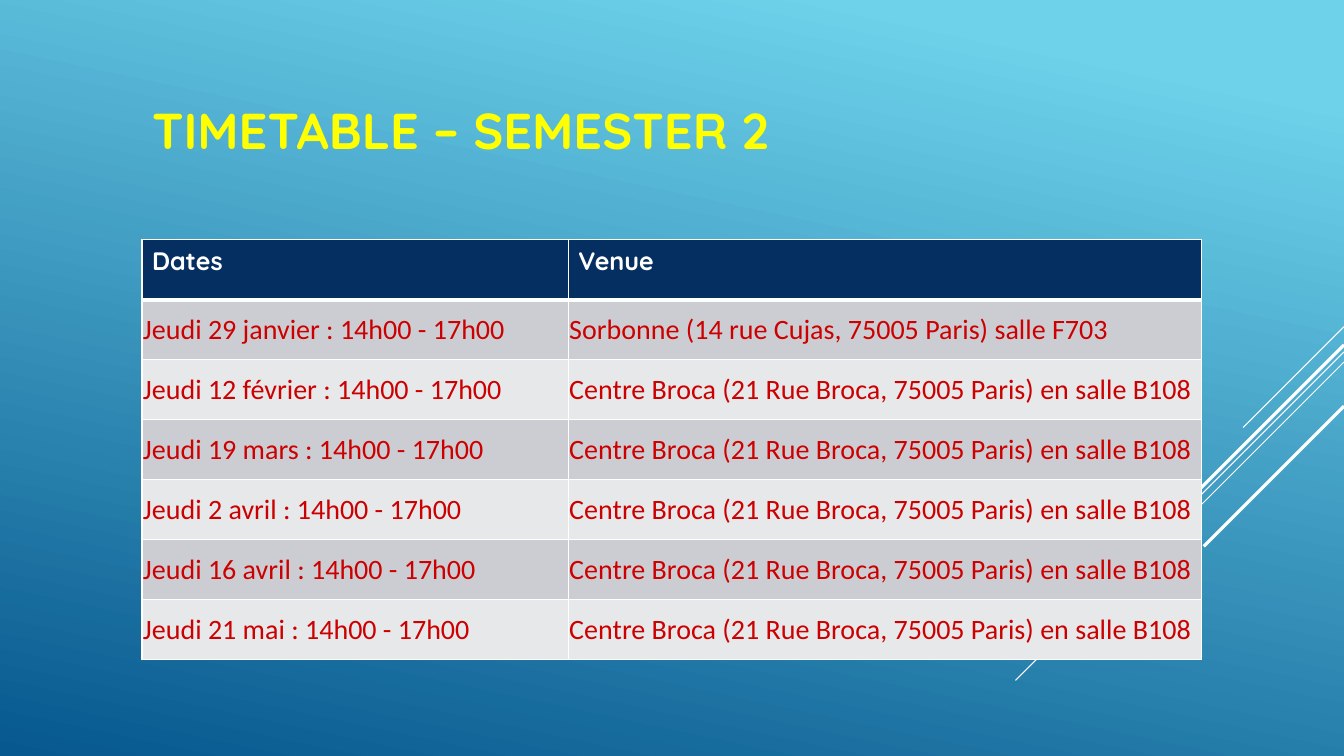
import pptx
import pptx.dml.color
import pptx.enum.shapes
import pptx.enum.text
import pptx.oxml
import pptx.oxml.ns
import pptx.util
from lxml import etree

RGBColor = pptx.dml.color.RGBColor
SKY = RGBColor(0x6E, 0xD2, 0xEB)
OCEAN = RGBColor(0x06, 0x58, 0x8E)
NAVY = RGBColor(0x05, 0x2F, 0x61)
YELLOW = RGBColor(0xFF, 0xFF, 0x00)
WHITE = RGBColor(0xFF, 0xFF, 0xFF)
RED = RGBColor(0xCC, 0x00, 0x00)
BANDS = (RGBColor(0xCC, 0xCD, 0xD2), RGBColor(0xE7, 0xE8, 0xEA))

COLUMNS, ROWS = 32, 18
LEFT = 3.38
BROCA = "Centre Broca (21 Rue Broca, 75005 Paris) en salle B108"
HEADINGS = ("Dates", "Venue")
SESSIONS = (
    ("Jeudi 29 janvier", "Sorbonne (14 rue Cujas, 75005 Paris) salle F703"),
    ("Jeudi 12 février", BROCA),
    ("Jeudi 19 mars", BROCA),
    ("Jeudi 2 avril", BROCA),
    ("Jeudi 16 avril", BROCA),
    ("Jeudi 21 mai", BROCA),
)
RAYS = ((7.78, 2.4, 0.75), (8.38, 7.82, 0.75), (8.62, 4.97, 0.75),
        (8.21, 4.58, 2.25), (9.67, 3.34, 2.25))


class TimetableSlide:
    heading_font = "Quicksand"
    body_font = "Calibri"

    def __init__(self, deck):
        self.unit_x = deck.slide_width / COLUMNS
        self.unit_y = deck.slide_height / ROWS
        self.slide = deck.slides.add_slide(deck.slide_layouts[5])

    def x(self, columns):
        return pptx.util.Emu(round(columns * self.unit_x))

    def y(self, rows):
        return pptx.util.Emu(round(rows * self.unit_y))

    def style(self, paragraph, font, size, color, bold):
        paragraph.alignment = pptx.enum.text.PP_ALIGN.LEFT
        paragraph.font.name = font
        paragraph.font.size = pptx.util.Pt(size)
        paragraph.font.color.rgb = color
        paragraph.font.bold = bold

    def backdrop(self):
        fill = self.slide.background.fill
        fill.gradient()
        fill.gradient_angle = 258
        for stop, color, position in zip(fill.gradient_stops, (SKY, OCEAN), (0.1, 1)):
            stop.color.rgb = color
            stop.position = position

    def ray(self, top, reach, width):
        line = self.slide.shapes.add_connector(
            pptx.enum.shapes.MSO_CONNECTOR.STRAIGHT,
            self.x(COLUMNS), self.y(top), self.x(COLUMNS - reach), self.y(top + reach))
        line.line.color.rgb = WHITE
        line.line.width = pptx.util.Pt(width)
        etree.SubElement(line._element.spPr, pptx.oxml.ns.qn("a:effectLst"))

    def title(self, text, left, top, width, height):
        title = self.slide.shapes.title
        title.left, title.top = self.x(left), self.y(top)
        title.width, title.height = self.x(width), self.y(height)
        frame = title.text_frame
        frame.text = text
        frame.word_wrap = True
        frame.auto_size = pptx.enum.text.MSO_AUTO_SIZE.NONE
        frame.vertical_anchor = pptx.enum.text.MSO_ANCHOR.MIDDLE
        self.style(frame.paragraphs[0], self.heading_font, 36, YELLOW, True)

    def borders(self, cell, top, bottom):
        properties = cell._tc.get_or_add_tcPr()
        sides = (("lnL", 1), ("lnR", 1), ("lnT", top), ("lnB", bottom))
        for order, (side, width) in enumerate(sides):
            properties.insert(order, pptx.oxml.parse_xml(
                f'<a:{side} {pptx.oxml.ns.nsdecls("a")} w="{pptx.util.Pt(width)}">'
                f'<a:solidFill><a:srgbClr val="{WHITE}"/></a:solidFill></a:{side}>'))

    def header_cell(self, cell):
        self.style(cell.text_frame.paragraphs[0], self.heading_font, 18, WHITE, True)
        self.borders(cell, 1, 3)

    def session_cell(self, cell, first):
        cell.vertical_anchor = pptx.enum.text.MSO_ANCHOR.MIDDLE
        cell.margin_left = cell.margin_right = cell.margin_top = pptx.util.Inches(0.01)
        cell.margin_bottom = 0
        self.style(cell.text_frame.paragraphs[0], self.body_font, 20, RED, False)
        self.borders(cell, 3 if first else 1, 1)

    def timetable(self, records, left, top, widths, height):
        table = self.slide.shapes.add_table(
            len(records), len(widths), self.x(left), self.y(top),
            self.x(sum(widths)), self.y(height)).table
        for column, width in zip(table.columns, widths):
            column.width = self.x(width)
        for number, record in enumerate(records):
            table.rows[number].height = self.y(height / len(records))
            for position, text in enumerate(record):
                cell = table.cell(number, position)
                cell.text = text
                cell.fill.solid()
                cell.fill.fore_color.rgb = BANDS[(number - 1) % 2] if number else NAVY
                if number:
                    self.session_cell(cell, number == 1)
                else:
                    self.header_cell(cell)


def main():
    deck = pptx.Presentation()
    deck.slide_width = pptx.util.Inches(13.33)
    deck.slide_height = pptx.util.Inches(7.5)
    page = TimetableSlide(deck)
    page.backdrop()
    for ray in RAYS:
        page.ray(*ray)
    page.title("TIMETABLE – SEMESTER 2", LEFT, 1.1, 22.4, 3.96)
    sessions = [(f"{day} : 14h00 - 17h00", venue) for day, venue in SESSIONS]
    page.timetable([HEADINGS, *sessions], LEFT, 5.71, (10.15, 15.07), 10)
    deck.save("out.pptx")


if __name__ == "__main__":
    main()
